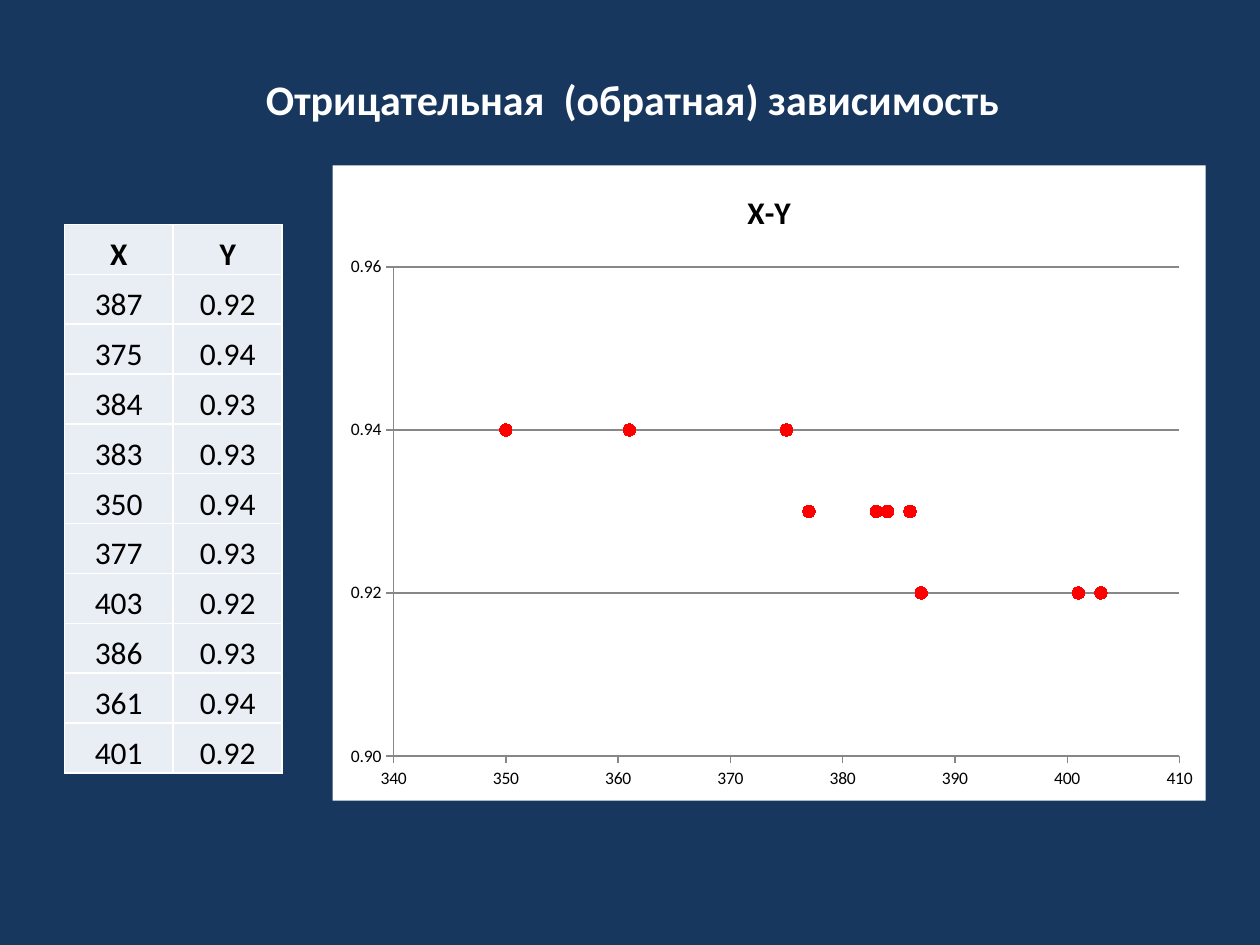
from dataclasses import dataclass

from pptx import Presentation
from pptx.chart.data import XyChartData
from pptx.dml.color import RGBColor
from pptx.enum.chart import XL_CHART_TYPE, XL_MARKER_STYLE, XL_TICK_LABEL_POSITION, XL_TICK_MARK
from pptx.enum.text import MSO_ANCHOR, PP_ALIGN
from pptx.oxml import parse_xml
from pptx.oxml.ns import nsdecls, qn
from pptx.util import Pt

COLORS = {
    "background": "17375E",
    "white": "FFFFFF",
    "black": "000000",
    "cell": "E9EDF4",
    "marker": "FF0000",
    "grid": "878787",
}
FONT = "Calibri"


@dataclass(frozen=True)
class Point:
    x: int
    y: float


@dataclass(frozen=True)
class Scale:
    low: float
    high: float
    step: float
    number_format: str


POINTS = [
    Point(387, 0.92), Point(375, 0.94), Point(384, 0.93), Point(383, 0.93),
    Point(350, 0.94), Point(377, 0.93), Point(403, 0.92), Point(386, 0.93),
    Point(361, 0.94), Point(401, 0.92),
]
X_SCALE = Scale(340, 410, 10, "0")
Y_SCALE = Scale(0.9, 0.96, 0.02, "0.00")


def rgb(name: str) -> RGBColor:
    return RGBColor.from_string(COLORS[name])


def set_font(font, size: float, color: str, bold: bool = False) -> None:
    font.name = FONT
    font.size = Pt(size)
    font.bold = bold
    font.color.rgb = rgb(color)


def add_title(s, text: str) -> None:
    sp = s.shapes.title
    sp.left, sp.top, sp.width, sp.height = Pt(144.75), Pt(38.25), Pt(458.5), Pt(36)
    tf = sp.text_frame
    tf.text = text
    tf.word_wrap = True
    tf.vertical_anchor = MSO_ANCHOR.TOP
    p = tf.paragraphs[0]
    p.alignment = PP_ALIGN.LEFT
    set_font(p.runs[0].font, 24, "white", bold=True)


def format_cell(cell, text: str, bold: bool) -> None:
    cell.fill.solid()
    cell.fill.fore_color.rgb = rgb("cell")
    cell.vertical_anchor = MSO_ANCHOR.BOTTOM
    cell.margin_left = cell.margin_right = cell.margin_top = Pt(0.75)
    cell.margin_bottom = 0
    cell.text = text
    p = cell.text_frame.paragraphs[0]
    p.alignment = PP_ALIGN.CENTER
    set_font(p.runs[0].font, 18, "black", bold)
    tc_pr = cell._tc.get_or_add_tcPr()
    for i, side in enumerate(("lnL", "lnR", "lnT", "lnB")):
        tc_pr.insert(i, parse_xml(
            f'<a:{side} {nsdecls("a")} w="{Pt(1)}"><a:solidFill>'
            f'<a:srgbClr val="{COLORS["white"]}"/></a:solidFill></a:{side}>'))


def add_value_table(s, points: list[Point]) -> None:
    rows = [("X", "Y")] + [(str(pt.x), f"{pt.y:.2f}") for pt in points]
    col_width, row_height = Pt(62.25), Pt(28.5)
    table = s.shapes.add_table(len(rows), 2, Pt(36.75), Pt(128.25),
                               col_width * 2, row_height * len(rows)).table
    table.first_row = table.horz_banding = False
    for col in table.columns:
        col.width = col_width
    for r, values in enumerate(rows):
        table.rows[r].height = row_height
        for c, text in enumerate(values):
            format_cell(table.cell(r, c), text, bold=r == 0)


def format_axis(axis, scale: Scale, gridlines: bool) -> None:
    axis.minimum_scale, axis.maximum_scale = scale.low, scale.high
    axis.major_unit = scale.step
    axis.major_tick_mark = XL_TICK_MARK.OUTSIDE
    axis.minor_tick_mark = XL_TICK_MARK.NONE
    axis.tick_label_position = XL_TICK_LABEL_POSITION.LOW
    axis.tick_labels.number_format = scale.number_format
    axis.tick_labels.number_format_is_linked = False
    axis.has_major_gridlines = gridlines
    lines = [axis.format.line]
    if gridlines:
        lines.append(axis.major_gridlines.format.line)
    for line in lines:
        line.color.rgb = rgb("grid")
        line.width = Pt(0.75)


def set_chart_area(chart) -> None:
    """Fill the chart area with white and fix the inner plot area."""
    chart.element.find(qn("c:chart")).addnext(parse_xml(
        f'<c:spPr {nsdecls("c", "a")}><a:solidFill><a:srgbClr val="{COLORS["white"]}"/>'
        '</a:solidFill><a:ln><a:noFill/></a:ln></c:spPr>'))
    plot_area = chart.element.find(".//" + qn("c:plotArea"))
    for layout in plot_area.findall(qn("c:layout")):
        plot_area.remove(layout)
    places = {"x": 0.07, "y": 0.16, "w": 0.9, "h": 0.77}
    modes = '<c:xMode val="edge"/><c:yMode val="edge"/>'
    sizes = "".join(f'<c:{key} val="{value}"/>' for key, value in places.items())
    plot_area.insert(0, parse_xml(
        f'<c:layout {nsdecls("c")}><c:manualLayout><c:layoutTarget val="inner"/>'
        f'{modes}{sizes}</c:manualLayout></c:layout>'))


def add_scatter_chart(s, points: list[Point]) -> None:
    data = XyChartData()
    data_series = data.add_series("X-Y")
    for pt in points:
        data_series.add_data_point(pt.x, pt.y)
    chart = s.shapes.add_chart(XL_CHART_TYPE.XY_SCATTER, Pt(190), Pt(94.5),
                               Pt(499), Pt(363), data).chart
    set_font(chart.font, 10, "black")
    chart.has_legend = False
    chart.has_title = True
    tf = chart.chart_title.text_frame
    tf.text = "X-Y"
    set_font(tf.paragraphs[0].runs[0].font, 18, "black", bold=True)
    chart.chart_title.include_in_layout = False

    format_axis(chart.category_axis, X_SCALE, gridlines=False)
    format_axis(chart.value_axis, Y_SCALE, gridlines=True)

    plot = chart.plots[0]
    plot.vary_by_categories = False
    series = plot.series[0]
    series.format.line.fill.background()
    series.marker.style = XL_MARKER_STYLE.CIRCLE
    series.marker.size = 7
    series.marker.format.fill.solid()
    series.marker.format.fill.fore_color.rgb = rgb("marker")
    series.marker.format.line.color.rgb = rgb("marker")
    set_chart_area(chart)


def main() -> None:
    prs = Presentation()
    prs.slide_width, prs.slide_height = Pt(720), Pt(540)
    s = prs.slides.add_slide(prs.slide_layouts[5])
    s.background.fill.solid()
    s.background.fill.fore_color.rgb = rgb("background")
    add_title(s, "Отрицательная  (обратная) зависимость")
    add_value_table(s, POINTS)
    add_scatter_chart(s, POINTS)
    prs.save("out.pptx")


if __name__ == "__main__":
    main()
